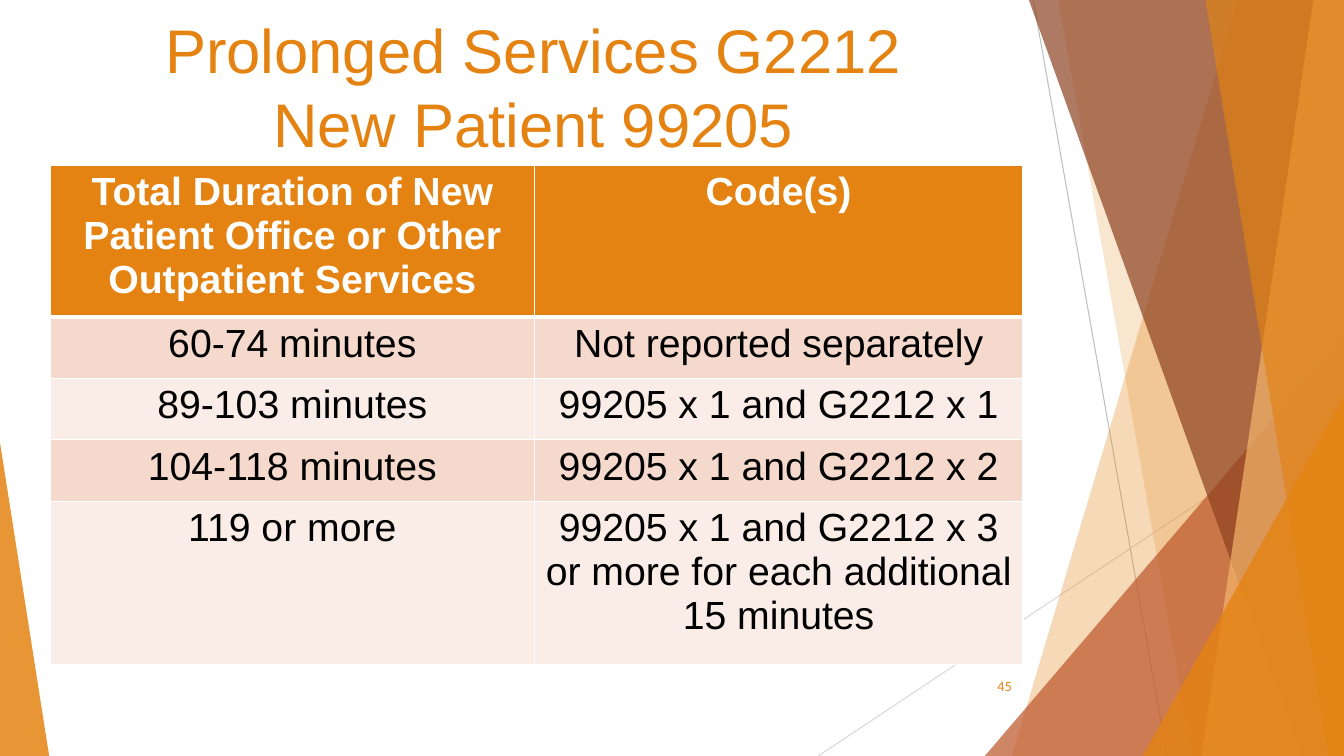
"""Build the slide on prolonged services for new patients."""
from dataclasses import dataclass

from lxml.etree import SubElement
from pptx import Presentation
from pptx.dml.color import RGBColor
from pptx.enum.shapes import MSO_CONNECTOR, MSO_SHAPE
from pptx.enum.text import MSO_ANCHOR, PP_ALIGN
from pptx.oxml import parse_xml
from pptx.oxml.ns import nsdecls, qn
from pptx.shapes.autoshape import Shape
from pptx.slide import Slide
from pptx.table import _Cell
from pptx.text.text import TextFrame
from pptx.util import Cm, Pt

WIDTH, HEIGHT = 33.87, 19.05
COLORS = {
    "orange": "E48312", "rust": "BD582C", "brown": "8E4221", "peach": "F3B56C",
    "band_dark": "F5D9CC", "band_light": "FAEDE7",
    "gray": "BFBFBF", "light_gray": "D9D9D9", "white": "FFFFFF", "black": "000000",
}


@dataclass(frozen=True)
class Ray:
    start: tuple[float, float]
    end: tuple[float, float]
    color: str


@dataclass(frozen=True)
class Panel:
    top_x: float
    bottom_x: float
    color: str
    opacity: int


@dataclass(frozen=True)
class Wedge:
    left: float
    top: float
    width: float
    apex: float
    color: str
    opacity: int


RAYS = [
    Ray((26.04, 0), (29.41, HEIGHT), "gray"),
    Ray((WIDTH, 10.24), (20.62, HEIGHT), "light_gray"),
]
FACETS = [
    Panel(31.19, 25.5, "orange", 30),
    Panel(26.67, 30.05, "orange", 20),
    Wedge(24.82, 8.46, 9.05, 1, "rust", 72),
    Panel(25.93, 32.79, "brown", 70),
    Panel(33.1, 30.28, "peach", 70),
    Panel(30.38, 33.48, "orange", 65),
    Wedge(28.8, 9.98, 5.07, 1, "orange", 80),
    Wedge(0, 11.15, 1.24, 0, "orange", 85),
]
COLUMN_WIDTHS = [12.19, 12.32]
ROW_HEIGHTS = [3.81, 1.55, 1.55, 1.55, 4.11]
ROWS = [
    ("Total Duration of New Patient Office or Other Outpatient Services", "Code(s)"),
    ("60-74 minutes", "Not reported separately"),
    ("89-103 minutes", "99205 x 1 and G2212 x 1"),
    ("104-118 minutes", "99205 x 1 and G2212 x 2"),
    ("119 or more", "99205 x 1 and G2212 x 3 or more for each additional 15 minutes"),
]


def rgb(name: str) -> RGBColor:
    """Return the named colour."""
    return RGBColor.from_string(COLORS[name])


def write_text(frame: TextFrame, text: str, *, size: float, color: str,
               font: str = "Arial", bold: bool = False,
               align: PP_ALIGN = PP_ALIGN.CENTER) -> None:
    """Fill a text frame with one formatted paragraph."""
    frame.word_wrap = True
    paragraph = frame.paragraphs[0]
    paragraph.text = text
    paragraph.alignment = align
    for run in paragraph.runs:
        run.font.name = font
        run.font.size = Pt(size)
        run.font.bold = bold
        run.font.color.rgb = rgb(color)


def draw_ray(slide: Slide, ray: Ray) -> None:
    """Draw one thin background line."""
    connector = slide.shapes.add_connector(
        MSO_CONNECTOR.STRAIGHT, *(Cm(value) for value in ray.start + ray.end))
    connector.line.color.rgb = rgb(ray.color)
    connector.line.width = Pt(0.75)
    SubElement(connector._element.spPr, qn("a:effectLst"))


def paint(shape: Shape, color: str, opacity: int) -> None:
    """Give a shape a translucent fill without outline or shadow."""
    shape.shadow.inherit = False
    shape.line.fill.background()
    shape.fill.solid()
    shape.fill.fore_color.rgb = rgb(color)
    color_element = shape._element.spPr.find(qn("a:solidFill"))[0]
    SubElement(color_element, qn("a:alpha"), val=str(opacity * 1000))


def draw_facet(slide: Slide, facet: Panel | Wedge) -> None:
    """Draw a panel reaching the right edge or a wedge standing on the bottom."""
    if isinstance(facet, Panel):
        builder = slide.shapes.build_freeform(Cm(facet.top_x), 0)
        corners = [(WIDTH, 0), (WIDTH, HEIGHT), (facet.bottom_x, HEIGHT)]
        builder.add_line_segments([(Cm(x), Cm(y)) for x, y in corners], close=True)
        shape = builder.convert_to_shape()
    else:
        shape = slide.shapes.add_shape(
            MSO_SHAPE.ISOSCELES_TRIANGLE, Cm(facet.left), Cm(facet.top),
            Cm(facet.width), Cm(HEIGHT - facet.top))
        shape.adjustments[0] = facet.apex
    paint(shape, facet.color, facet.opacity)


def set_borders(cell: _Cell, bottom: float) -> None:
    """Draw white borders around a cell."""
    widths = {"lnL": 1, "lnR": 1, "lnT": 1, "lnB": bottom}
    properties = cell._tc.get_or_add_tcPr()
    for index, (side, width) in enumerate(widths.items()):
        properties.insert(index, parse_xml(
            f'<a:{side} {nsdecls("a")} w="{Pt(width)}"><a:solidFill>'
            f'<a:srgbClr val="{COLORS["white"]}"/></a:solidFill></a:{side}>'))


def draw_table(slide: Slide) -> None:
    """Draw the table of durations and codes."""
    table = slide.shapes.add_table(
        len(ROWS), len(COLUMN_WIDTHS), Cm(1.27), Cm(4.17),
        Cm(sum(COLUMN_WIDTHS)), Cm(sum(ROW_HEIGHTS))).table
    for column, width in zip(table.columns, COLUMN_WIDTHS):
        column.width = Cm(width)
    for row_index, (row, height) in enumerate(zip(table.rows, ROW_HEIGHTS)):
        row.height = Cm(height)
        header = row_index == 0
        band = "band_dark" if row_index % 2 else "band_light"
        for cell, text in zip(row.cells, ROWS[row_index]):
            cell.fill.solid()
            cell.fill.fore_color.rgb = rgb("orange" if header else band)
            set_borders(cell, 3 if header else 1)
            write_text(cell.text_frame, text, size=28, bold=header,
                       color="white" if header else "black")


def main() -> None:
    """Build and save the presentation."""
    presentation = Presentation()
    presentation.slide_width, presentation.slide_height = Cm(WIDTH), Cm(HEIGHT)
    slide = presentation.slides.add_slide(presentation.slide_layouts[6])
    for ray in RAYS:
        draw_ray(slide, ray)
    for facet in FACETS:
        draw_facet(slide, facet)
    title = slide.shapes.add_textbox(Cm(1.14), Cm(0.18), Cm(24.61), Cm(3.78))
    write_text(title.text_frame, "Prolonged Services G2212\nNew Patient 99205",
               size=44, color="orange")
    draw_table(slide)
    number = slide.shapes.add_textbox(Cm(23.85), Cm(16.79), Cm(1.9), Cm(1.02))
    number.text_frame.vertical_anchor = MSO_ANCHOR.MIDDLE
    write_text(number.text_frame, "45", size=9, color="orange", font="Lato",
               align=PP_ALIGN.RIGHT)
    presentation.save("out.pptx")


if __name__ == "__main__":
    main()
